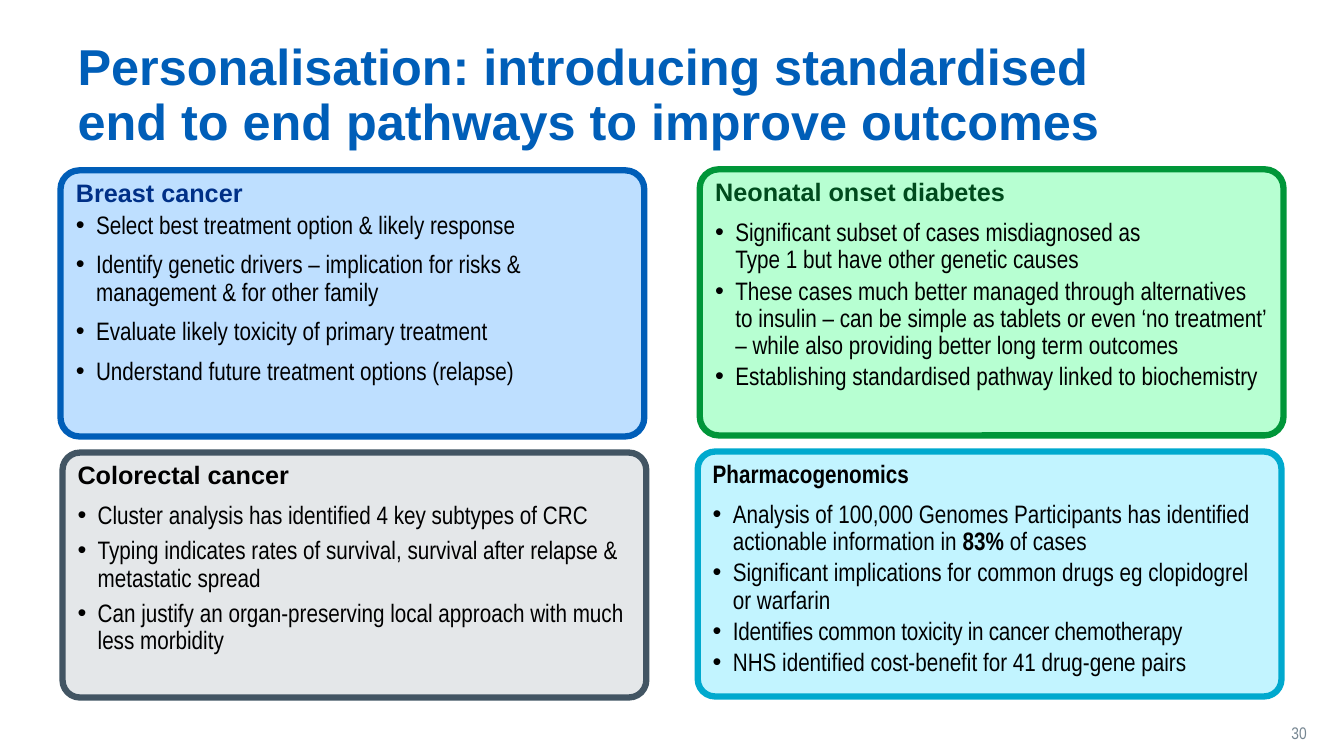
from lxml import etree
from pptx import Presentation
from pptx.dml.color import RGBColor
from pptx.enum.shapes import MSO_SHAPE
from pptx.enum.text import MSO_ANCHOR, PP_ALIGN
from pptx.oxml.ns import qn
from pptx.util import Inches, Pt

ROUNDED = MSO_SHAPE.ROUNDED_RECTANGLE
TOP, MIDDLE, BOTTOM = MSO_ANCHOR.TOP, MSO_ANCHOR.MIDDLE, MSO_ANCHOR.BOTTOM
LEFT = PP_ALIGN.LEFT
WIDE, NARROW = "Arial", "Arial Narrow"

COLOURS = {
    "title": "005EB8", "number": "768692", "text": "000000",
    "blue fill": "BEDFFF", "blue line": "005EB8", "blue heading": "003087",
    "grey fill": "E4E7E9", "grey line": "425563", "grey heading": "000000",
    "green fill": "B7FFD2", "green line": "009639", "green heading": "004B1D",
    "cyan fill": "C2F4FF", "cyan line": "00A9CE", "cyan heading": "000000",
}

TITLE = "Personalisation: introducing standardised end to end pathways to improve outcomes"
SLIDE_NUMBER = "30"

# A bullet is one string; "**" switches bold on and off, "\n" breaks the line.
CARDS = [
    {"cell": (0, 0), "nudge": (0, 0), "theme": "blue",
     "heading": "Breast cancer", "font": WIDE, "heading_after": 0, "bullet_after": 6,
     "bullets": [
         "Select best treatment option & likely response",
         "Identify genetic drivers – implication for risks & management & for other family",
         "Evaluate likely toxicity of primary treatment",
         "Understand future treatment options (relapse)"]},
    {"cell": (0, 1), "nudge": (0.02, 0), "theme": "grey",
     "heading": "Colorectal cancer", "font": WIDE, "heading_after": 6, "bullet_after": 3,
     "bullets": [
         "Cluster analysis has identified 4 key subtypes of CRC",
         "Typing indicates rates of survival, survival after relapse & metastatic spread",
         "Can justify an organ-preserving local approach with much less morbidity"]},
    {"cell": (1, 0), "nudge": (0, -0.01), "theme": "green",
     "heading": "Neonatal onset diabetes", "font": WIDE, "heading_after": 6, "bullet_after": 0,
     "bullets": [
         "Significant subset of cases misdiagnosed as\nType 1 but have other genetic causes",
         "These cases much better managed through alternatives to insulin – can be simple "
         "as tablets or even ‘no treatment’ – while also providing better long term outcomes",
         "Establishing standardised pathway linked to biochemistry"]},
    {"cell": (1, 1), "nudge": (-0.02, -0.01), "theme": "cyan",
     "heading": "Pharmacogenomics", "font": NARROW, "heading_after": 6, "bullet_after": 0,
     "bullets": [
         "Analysis of 100,000 Genomes Participants has identified actionable information in "
         "**83%** of cases",
         "Significant implications for common drugs eg clopidogrel or warfarin",
         "Identifies common toxicity in cancer chemotherapy",
         "NHS identified cost-benefit for 41 drug-gene pairs"]},
]
TIGHT_BULLETS = {"Identifies common toxicity in cancer chemotherapy": -20}

GRID_LEFT, COLUMN_STEP, CARD_WIDTH = 0.6, 6.34, 5.79
GRID_TOP, ROW_GAP, ROW_HEIGHTS = 1.69, 0.16, (2.64, 2.43)
CORNER = 0.071


def colour(name):
    return RGBColor.from_string(COLOURS[name])


def style(font, face, size, colour_name, bold=False):
    font.name, font.size, font.bold = face, Pt(size), bold
    font.color.rgb = colour(colour_name)


def space(paragraph, before, after):
    paragraph.alignment = LEFT
    paragraph.line_spacing = 0.9
    paragraph.space_before, paragraph.space_after = Pt(before), Pt(after)


def make_bullet(paragraph):
    properties = paragraph._p.get_or_add_pPr()
    properties.set("marL", str(Inches(0.2)))
    properties.set("indent", str(-Inches(0.2)))
    etree.SubElement(properties, qn("a:buFont")).set("typeface", "Arial")
    etree.SubElement(properties, qn("a:buChar")).set("char", "•")


def write_bullet(paragraph, text, after):
    space(paragraph, 3, after)
    make_bullet(paragraph)
    for index, part in enumerate(text.split("**")):
        for line_index, line in enumerate(part.split("\n")):
            if line_index:
                paragraph.add_line_break()
            run = paragraph.add_run()
            run.text = line
            style(run.font, NARROW, 18, "text", bold=index % 2 == 1)
            if text in TIGHT_BULLETS:
                run._r.get_or_add_rPr().set("spc", str(TIGHT_BULLETS[text]))


def add_card(slide, card):
    column, row = card["cell"]
    left = GRID_LEFT + column * COLUMN_STEP + card["nudge"][0]
    top = GRID_TOP + row * (ROW_HEIGHTS[0] + ROW_GAP) + card["nudge"][1]
    shape = slide.shapes.add_shape(ROUNDED, Inches(left), Inches(top),
                                   Inches(CARD_WIDTH), Inches(ROW_HEIGHTS[row]))
    shape.adjustments[0] = CORNER
    shape.shadow.inherit = False
    shape.fill.solid()
    shape.fill.fore_color.rgb = colour(card["theme"] + " fill")
    shape.line.color.rgb = colour(card["theme"] + " line")
    shape.line.width = Pt(4.5)

    frame = shape.text_frame
    frame.word_wrap, frame.vertical_anchor = True, TOP
    heading = frame.paragraphs[0]
    space(heading, 0, card["heading_after"])
    run = heading.add_run()
    run.text = card["heading"]
    style(run.font, card["font"], 18, card["theme"] + " heading", bold=True)
    for bullet in card["bullets"]:
        write_bullet(frame.add_paragraph(), bullet, card["bullet_after"])


def add_title(slide):
    title = slide.shapes.title
    title.left, title.top = Inches(0.67), Inches(0.82)
    title.width, title.height = Inches(10.73), Inches(0.73)
    frame = title.text_frame
    frame.word_wrap, frame.vertical_anchor = True, BOTTOM
    space(frame.paragraphs[0], 0, 0)
    run = frame.paragraphs[0].add_run()
    run.text = TITLE
    style(run.font, WIDE, 36, "title", bold=True)


def add_slide_number(slide):
    box = slide.shapes.add_textbox(Inches(12.71), Inches(7.11), Inches(0.54), Inches(0.32))
    frame = box.text_frame
    frame.word_wrap, frame.vertical_anchor = True, MIDDLE
    run = frame.paragraphs[0].add_run()
    run.text = SLIDE_NUMBER
    style(run.font, NARROW, 12, "number")


def main():
    presentation = Presentation()
    presentation.slide_width, presentation.slide_height = Inches(13.33), Inches(7.5)
    slide = presentation.slides.add_slide(presentation.slide_layouts[5])
    add_title(slide)
    add_slide_number(slide)
    for card in CARDS:
        add_card(slide, card)
    presentation.save("out.pptx")


if __name__ == "__main__":
    main()
